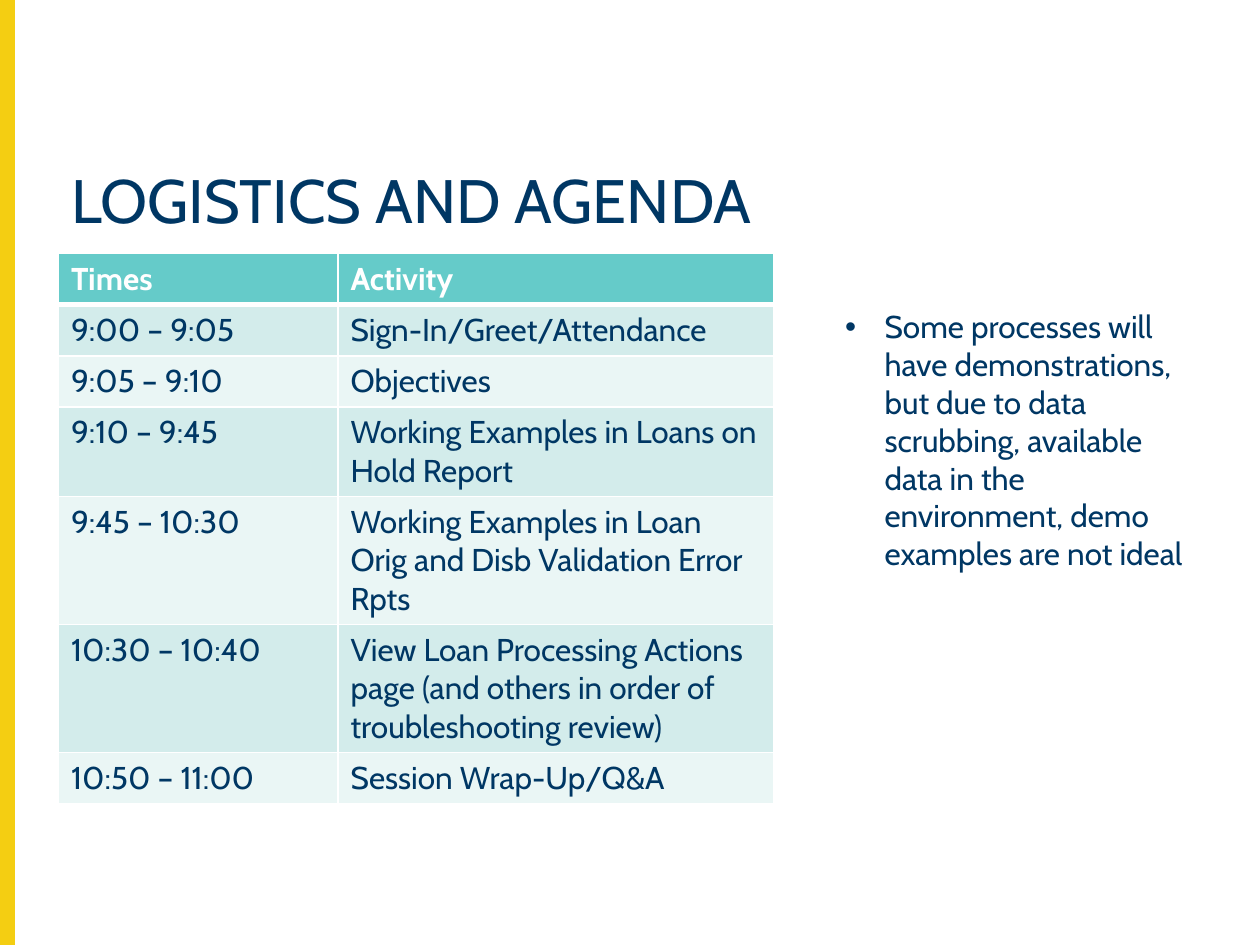
from lxml import etree
from pptx import Presentation
from pptx.dml.color import RGBColor
from pptx.enum.shapes import MSO_SHAPE
from pptx.enum.text import MSO_ANCHOR, PP_ALIGN
from pptx.oxml.ns import qn
from pptx.util import Pt

LEFT, TOP = PP_ALIGN.LEFT, MSO_ANCHOR.TOP
RECTANGLE = MSO_SHAPE.RECTANGLE

# Content
TITLE = "LOGISTICS AND AGENDA"
AGENDA = [
    ("Times", "Activity"),
    ("9:00 – 9:05", "Sign-In/Greet/Attendance"),
    ("9:05 – 9:10", "Objectives"),
    ("9:10 – 9:45", "Working Examples in Loans on Hold Report"),
    ("9:45 – 10:30", "Working Examples in Loan Orig and Disb Validation Error Rpts"),
    ("10:30 – 10:40", "View Loan Processing Actions page (and others in order of "
                      "troubleshooting review)"),
    ("10:50 – 11:00", "Session Wrap-Up/Q&A"),
]
NOTE = ("Some processes will have demonstrations, but due to data scrubbing, "
        "available data in the environment, demo examples are not ideal")

# Style
FONT = "Cabin"
NAVY, WHITE, YELLOW, TEAL = "003764", "FFFFFF", "F4CE12", "65CBC9"
BANDS = ("EAF6F5", "D3ECEB")
COLUMN_WIDTHS = (159.8, 249.1)
ROW_HEIGHT = 26.64


def color(value):
    return RGBColor.from_string(value)


def style(para, size, value, bold=False):
    para.alignment = LEFT
    font = para.font
    font.name, font.size, font.bold = FONT, Pt(size), bold
    font.color.rgb = color(value)


def add_borders(cell, widths):
    properties = cell._tc.get_or_add_tcPr()
    for side, width in widths.items():
        line = etree.SubElement(properties, qn(f"a:ln{side}"), w=str(Pt(width)))
        fill = etree.SubElement(line, qn("a:solidFill"))
        etree.SubElement(fill, qn("a:srgbClr"), val=WHITE)


deck = Presentation()
deck.slide_width, deck.slide_height = Pt(720), Pt(540)
page = deck.slides.add_slide(deck.slide_layouts[5])

# Yellow edge
edge = page.shapes.add_shape(RECTANGLE, 0, 0, Pt(7.92), deck.slide_height)
edge.shadow.inherit = False
edge.fill.solid()
edge.fill.fore_color.rgb = edge.line.color.rgb = color(YELLOW)
edge.line.width = Pt(1)

# Title
title = page.shapes.title
title.left, title.top, title.width, title.height = Pt(33.4), Pt(93.6), Pt(671.8), Pt(56.9)
title.text_frame.text = TITLE
title.text_frame.vertical_anchor = TOP
heading = title.text_frame.paragraphs[0]
heading.line_spacing = 0.9
style(heading, 35, NAVY)

# Agenda table
table = page.shapes.add_table(
    len(AGENDA), len(COLUMN_WIDTHS), Pt(33.4), Pt(144.9),
    Pt(sum(COLUMN_WIDTHS)), Pt(ROW_HEIGHT * len(AGENDA))).table
for column, width in zip(table.columns, COLUMN_WIDTHS):
    column.width = Pt(width)
for i, entries in enumerate(AGENDA):
    header = i == 0
    table.rows[i].height = Pt(ROW_HEIGHT)
    for j, words in enumerate(entries):
        cell = table.cell(i, j)
        cell.text = words
        style(cell.text_frame.paragraphs[0], 18, WHITE if header else NAVY, header)
        add_borders(cell, {"L": 1, "R": 1, "T": 3 if i == 1 else 1, "B": 3 if header else 1})
        cell.fill.solid()
        cell.fill.fore_color.rgb = color(TEAL if header else BANDS[i % 2])

# Bulleted note
box = page.shapes.add_textbox(Pt(475.9), Pt(172.1), Pt(218.9), Pt(159.8))
box.text_frame.word_wrap = True
box.text_frame.text = NOTE
para = box.text_frame.paragraphs[0]
style(para, 18, NAVY)
properties = para._p.get_or_add_pPr()
properties.set("marL", str(Pt(22.5)))
properties.set("indent", str(Pt(-22.5)))
bullet_font = etree.Element(qn("a:buFont"), typeface="Arial")
bullet = etree.Element(qn("a:buChar"), char="•")
properties.insert(0, bullet_font)
properties.insert(1, bullet)

deck.save("out.pptx")
